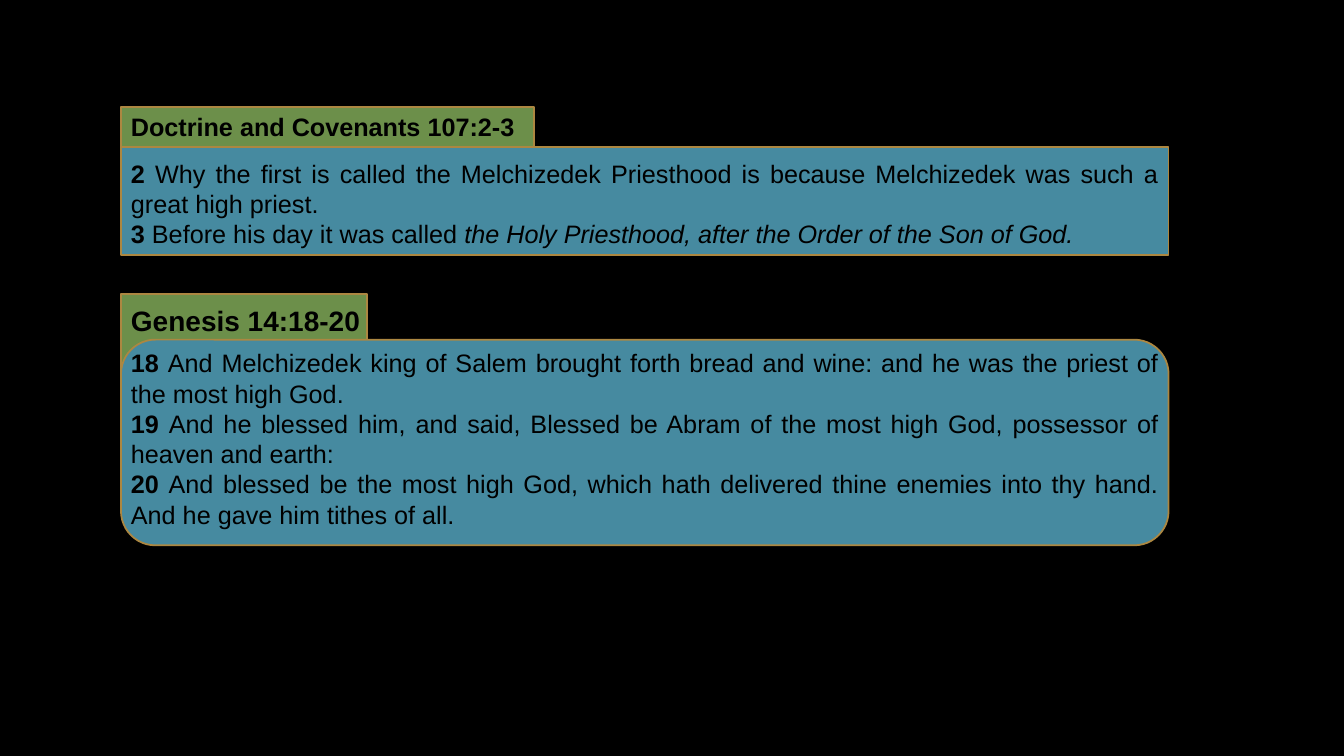
"""Build a slide with two scripture passages, each under a title tab."""
from pptx import Presentation
from pptx.dml.color import RGBColor
from pptx.enum import shapes, text
from pptx.util import Inches, Pt

THEME = {
    "back": RGBColor.from_string("000000"),
    "ink": RGBColor.from_string("000000"),
    "tab": RGBColor.from_string("6C8F4A"),
    "panel": RGBColor.from_string("468AA0"),
    "edge": RGBColor.from_string("AC8741"),
    "font": "Arial",
    "body": Pt(18),
    "title": Pt(20),
    "line": Pt(1.25),
}
LEFT, WIDTH = 1.2, 10.39
RECT = shapes.MSO_SHAPE.RECTANGLE
ROUND = shapes.MSO_SHAPE.ROUNDED_RECTANGLE
PLAIN, BOLD, SLANT = {"bold": False}, {"bold": True}, {"italic": True}

prs = Presentation()
prs.slide_width, prs.slide_height = Inches(13.33), Inches(7.5)
slide = prs.slides.add_slide(prs.slide_layouts[6])
slide.background.fill.solid()
slide.background.fill.fore_color.rgb = THEME["back"]


def add_panel(kind, top, width, height, fill):
    """Draw one filled and outlined panel at the left margin."""
    panel = slide.shapes.add_shape(
        kind, Inches(LEFT), Inches(top), Inches(width), Inches(height))
    panel.shadow.inherit = False
    panel.fill.solid()
    panel.fill.fore_color.rgb = THEME[fill]
    panel.line.color.rgb = THEME["edge"]
    panel.line.width = THEME["line"]


def add_text(top, width, height, lines, size, wrap, align):
    """Write paragraphs of formatted runs at the left margin."""
    box = slide.shapes.add_textbox(
        Inches(LEFT), Inches(top), Inches(width), Inches(height))
    frame = box.text_frame
    frame.word_wrap = wrap
    frame.auto_size = text.MSO_AUTO_SIZE.SHAPE_TO_FIT_TEXT
    for i, line in enumerate(lines):
        para = frame.paragraphs[0] if i == 0 else frame.add_paragraph()
        para.alignment = align
        for words, style in line:
            run = para.add_run()
            run.text = words
            run.font.color.rgb = THEME["ink"]
            look = {"name": THEME["font"], "size": THEME[size], **style}
            for key, value in look.items():
                setattr(run.font, key, value)


panels = [
    (RECT, 2.92, 2.44, 1.03, "tab"),
    (ROUND, 3.37, WIDTH, 2.04, "panel"),
    (RECT, 1.06, 4.1, 0.68, "tab"),
    (RECT, 1.46, WIDTH, 1.07, "panel"),
]
for panel in panels:
    add_panel(*panel)

titles = [
    (1.06, 4.1, 0.4, "Doctrine and Covenants 107:2-3", "body"),
    (2.96, 2.49, 0.44, "Genesis 14:18-20", "title"),
]
for top, width, height, words, size in titles:
    add_text(top, width, height, [[(words, BOLD)]], size, False,
             text.PP_ALIGN.LEFT)

verses = [
    (1.52, 1.01, [
        [("2 ", BOLD),
         ("Why the first is called the Melchizedek Priesthood is because "
          "Melchizedek was such a great high priest.", PLAIN)],
        [("3 ", BOLD),
         ("Before his day it was called ", PLAIN),
         ("the Holy Priesthood, after the Order of the Son of God.", SLANT)],
    ]),
    (3.4, 1.92, [
        [("18 ", BOLD),
         ("And Melchizedek king of Salem brought forth bread and wine: "
          "and he was the priest of the most high God.", PLAIN)],
        [("19 ", BOLD),
         ("And he blessed him, and said, Blessed be Abram of the most "
          "high God, possessor of heaven and earth:", PLAIN)],
        [("20 ", BOLD),
         ("And blessed be the most high God, which hath delivered thine "
          "enemies into thy hand. And he gave him tithes of all.", PLAIN)],
    ]),
]
for top, height, lines in verses:
    add_text(top, WIDTH, height, lines, "body", True, text.PP_ALIGN.JUSTIFY)

prs.save("out.pptx")
